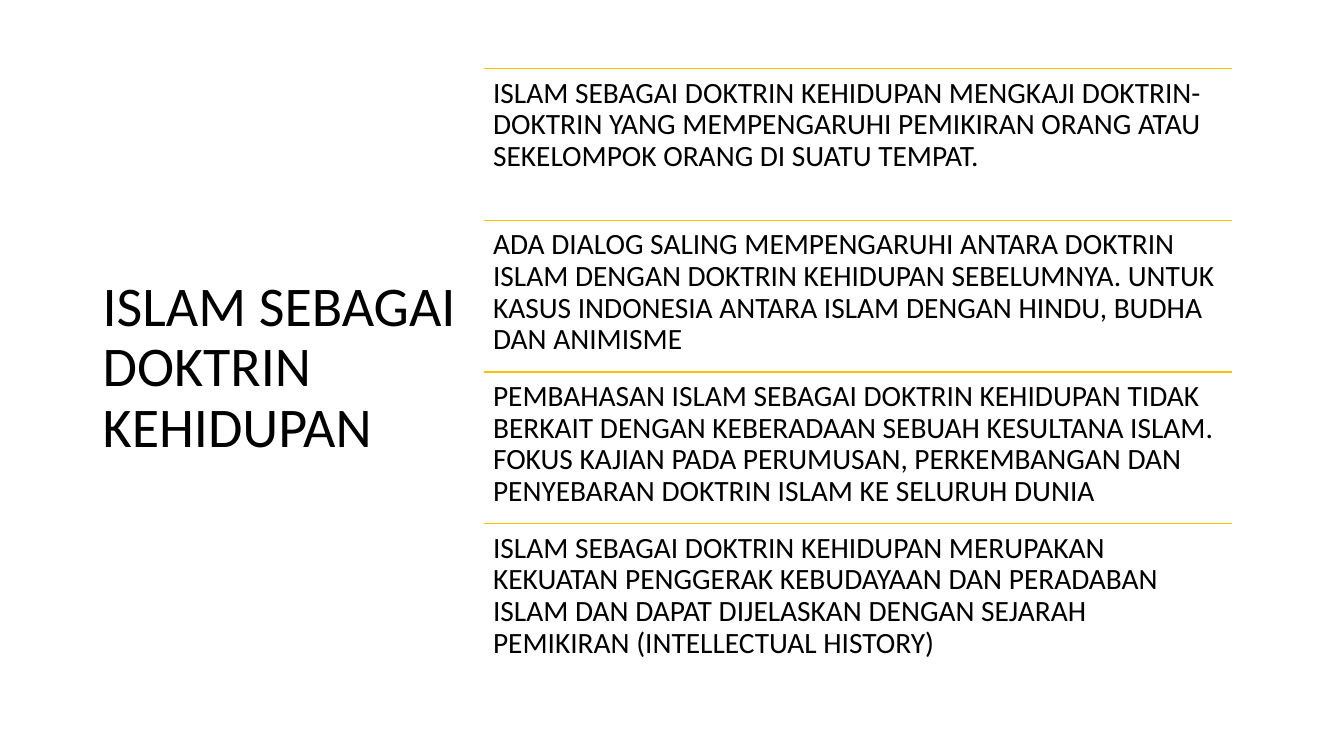
import dataclasses

import pptx
import pptx.dml.color
import pptx.enum.shapes
import pptx.enum.text
import pptx.oxml.ns
import pptx.slide
import pptx.util
from lxml import etree

Inches = pptx.util.Inches
Pt = pptx.util.Pt

BLACK = pptx.dml.color.RGBColor(0x00, 0x00, 0x00)
WHITE = pptx.dml.color.RGBColor(0xFF, 0xFF, 0xFF)
GOLD = pptx.dml.color.RGBColor(0xFF, 0xC0, 0x00)
FONT = "Calibri"

LIST_LEFT = 4.8
LIST_TOP = 0.68
LIST_WIDTH = 7.42
LIST_HEIGHT = 6.02

POINTS = [
    "ISLAM SEBAGAI DOKTRIN KEHIDUPAN MENGKAJI DOKTRIN-DOKTRIN YANG MEMPENGARUHI "
    "PEMIKIRAN ORANG ATAU SEKELOMPOK ORANG DI SUATU TEMPAT.",
    "ADA DIALOG SALING MEMPENGARUHI ANTARA DOKTRIN ISLAM DENGAN DOKTRIN KEHIDUPAN "
    "SEBELUMNYA. UNTUK KASUS INDONESIA ANTARA ISLAM DENGAN HINDU, BUDHA DAN ANIMISME",
    "PEMBAHASAN ISLAM SEBAGAI DOKTRIN KEHIDUPAN TIDAK BERKAIT DENGAN KEBERADAAN "
    "SEBUAH KESULTANA ISLAM. FOKUS KAJIAN PADA PERUMUSAN, PERKEMBANGAN DAN "
    "PENYEBARAN DOKTRIN ISLAM KE SELURUH DUNIA",
    "ISLAM SEBAGAI DOKTRIN KEHIDUPAN MERUPAKAN KEKUATAN PENGGERAK KEBUDAYAAN DAN "
    "PERADABAN ISLAM DAN DAPAT DIJELASKAN DENGAN SEJARAH PEMIKIRAN "
    "(INTELLECTUAL HISTORY)",
]


@dataclasses.dataclass(frozen=True)
class TextBlock:
    text: str
    left: float
    top: float
    width: float
    height: float
    size: int
    anchor: pptx.enum.text.MSO_ANCHOR
    side_inset: float
    end_inset: float


def draw_text(page: pptx.slide.Slide, block: TextBlock) -> None:
    box = page.shapes.add_textbox(
        Inches(block.left), Inches(block.top), Inches(block.width), Inches(block.height)
    )
    frame = box.text_frame
    frame.word_wrap = True
    frame.vertical_anchor = block.anchor
    frame.margin_left = frame.margin_right = Inches(block.side_inset)
    frame.margin_top = frame.margin_bottom = Inches(block.end_inset)
    para = frame.paragraphs[0]
    para.line_spacing = 0.9
    span = para.add_run()
    span.text = block.text
    span.font.name = FONT
    span.font.size = Pt(block.size)
    span.font.color.rgb = BLACK


def draw_rule(page: pptx.slide.Slide, top: float) -> None:
    rule = page.shapes.add_connector(
        pptx.enum.shapes.MSO_CONNECTOR.STRAIGHT,
        Inches(LIST_LEFT), Inches(top), Inches(LIST_LEFT + LIST_WIDTH), Inches(top),
    )
    rule.line.color.rgb = GOLD
    rule.line.width = Pt(1)
    properties = rule.element.find(pptx.oxml.ns.qn("p:spPr"))
    etree.SubElement(properties, pptx.oxml.ns.qn("a:effectLst"))


def main() -> None:
    deck = pptx.Presentation()
    deck.slide_width = Inches(13.33)
    deck.slide_height = Inches(7.5)
    page = deck.slides.add_slide(deck.slide_layouts[6])
    page.background.fill.solid()
    page.background.fill.fore_color.rgb = WHITE

    anchors = pptx.enum.text.MSO_ANCHOR
    draw_text(page, TextBlock(
        "ISLAM SEBAGAI DOKTRIN KEHIDUPAN",
        0.92, 0.61, 3.88, 6.09, 40, anchors.MIDDLE, 0.1, 0.05,
    ))
    row_height = LIST_HEIGHT / len(POINTS)
    for index, point in enumerate(POINTS):
        top = LIST_TOP + index * row_height
        draw_rule(page, top)
        draw_text(page, TextBlock(
            point, LIST_LEFT, top, LIST_WIDTH, row_height, 21, anchors.TOP, 0.09, 0.09,
        ))
    deck.save("out.pptx")


if __name__ == "__main__":
    main()
